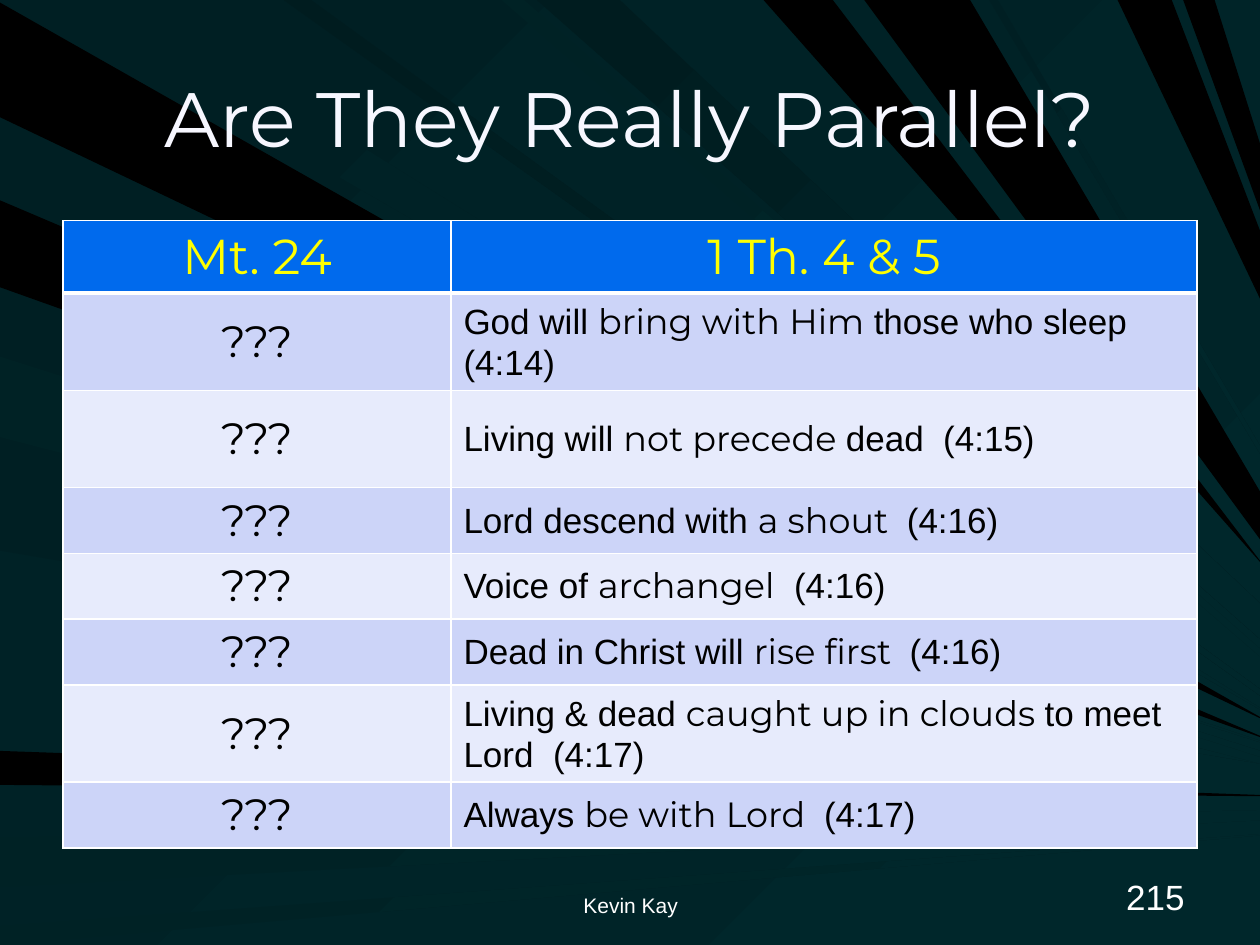
"""Build the 'Are They Really Parallel?' comparison slide over a fan of dark rays."""
from lxml import etree
from pptx import Presentation
from pptx import util as u
from pptx.dml.color import RGBColor
from pptx.enum import text
from pptx.oxml.ns import qn

C = {
    "black": "000000", "white": "FFFFFF", "title": "F7F7FF", "yellow": "FFFF00",
    "header": "006AED", "band1": "CCD4F8", "band2": "E7EBFC",
    "deep": "001C1F", "dark": "001F23", "dim": "002225", "teal": "00272B",
}

RAYS = [
    ("black", "left", 93, 2, 569, 570),
    ("dark", "top", 26, 101, 562, 563),
    ("black", "left", 623, 596, 631, 632),
    ("dim", "left", 704, 665, 643, 651),
    ("dim", "left", 750, 735, 662, 663),
    ("dark", "left", 270, 258, 588, 589),
    ("black", "left", 228, 159, 584, 585),
    ("dim", "top", 398, 416, 515, 521),
    ("deep", "top", 426, 492, 479, 507),
    ("black", "top", 606, 661, 445, 446),
    ("black", "top", 887, 930, 183, 237),
    ("black", "top", 939, 964, 114, 167),
    ("dark", "left", 342, 278, 596, 602),
    ("dark", "left", 437, 374, 605, 606),
    ("deep", "top", 225, 247, 547, 552),
    ("black", "top", 686, 770, 390, 428),
    ("dark", "top", 785, 792, 354, 360),
    ("dim", "left", 347, 283, 601, 606),
]

ROWS = [
    ("God will ", "bring with Him ", "those who sleep  (4:14)"),
    ("Living will ", "not precede ", "dead  (4:15)"),
    ("Lord descend with ", "a shout  ", "(4:16)"),
    ("Voice of ", "archangel", "  (4:16)"),
    ("Dead in Christ will ", "rise first  ", "(4:16)"),
    ("Living & dead ", "caught up in clouds ", "to meet Lord  (4:17)"),
    ("Always ", "be with Lord  ", "(4:17)"),
]
TALL_ROWS = (1, 2, 6)


def paint(fill, start, end):
    """Fill with one colour, or with a diagonal gradient."""
    if start == end:
        fill.solid()
        fill.fore_color.rgb = RGBColor.from_string(C[start])
        return
    fill.gradient()
    fill.gradient_angle = 315
    for stop, name in zip(fill.gradient_stops, (start, end)):
        stop.color.rgb = RGBColor.from_string(C[name])


def write(tf, parts, size, color, align):
    """Write (text, font name) parts as the runs of one paragraph."""
    tf.word_wrap = True
    p = tf.paragraphs[0]
    p.alignment = align
    for words, font in parts:
        r = p.add_run()
        r.text = words
        r.font.name = font
        r.font.size = u.Pt(size)
        r.font.bold = False
        r.font.color.rgb = RGBColor.from_string(C[color])


LEFT, CENTER, RIGHT = text.PP_ALIGN.LEFT, text.PP_ALIGN.CENTER, text.PP_ALIGN.RIGHT

prs = Presentation()
prs.slide_width, prs.slide_height = u.Cm(25.4), u.Cm(19.05)
s = prs.slides.add_slide(prs.slide_layouts[5])
paint(s.background.fill, "dark", "teal")

for color, edge, near_low, near_high, far_high, far_low in RAYS:
    near = [(0, d) if edge == "left" else (d, 0) for d in (near_low, near_high)]
    fb = s.shapes.build_freeform(*near[0], scale=u.Cm(25.4) / 1000)
    fb.add_line_segments([near[1], (1000, far_high), (1000, far_low)], close=True)
    sp = fb.convert_to_shape()
    sp.shadow.inherit = False
    sp.line.fill.background()
    paint(sp.fill, color, "black" if color == "black" else "teal")

title = s.shapes.title
s.shapes._spTree.append(title._element)
title.left, title.top = u.Cm(1.27), u.Cm(0.76)
title.width, title.height = u.Cm(22.86), u.Cm(3.18)
title.text_frame.vertical_anchor = text.MSO_ANCHOR.MIDDLE
write(title.text_frame, [("Are They Really Parallel?", "Montserrat")], 44, "title", CENTER)

heights = [1.45] + [1.96 if i in TALL_ROWS else 1.32 for i in range(1, len(ROWS) + 1)]
frame = s.shapes.add_table(len(heights), 2, u.Cm(1.27), u.Cm(4.45), u.Cm(22.86), u.Cm(sum(heights)))
table = frame.table
table.horz_banding = False
for column, width in zip(table.columns, (7.82, 15.04)):
    column.width = u.Cm(width)

for i, (row, height) in enumerate(zip(table.rows, heights)):
    row.height = u.Cm(height)
    for cell in row.cells:
        cell.vertical_anchor = text.MSO_ANCHOR.MIDDLE
        for side in "LRTB":
            thick = (i, side) in ((0, "B"), (1, "T"))
            ln = etree.SubElement(cell._tc.get_or_add_tcPr(), qn(f"a:ln{side}"), w=str(u.Pt(3 if thick else 1)))
            solid = etree.SubElement(ln, qn("a:solidFill"))
            etree.SubElement(solid, qn("a:srgbClr"), val=C["white"])
        band = "header" if i == 0 else "band1" if i % 2 else "band2"
        paint(cell.fill, band, band)

for j, heading in enumerate(("Mt. 24", "1 Th. 4 & 5")):
    write(table.cell(0, j).text_frame, [(heading, "Montserrat")], 28, "yellow", CENTER)
for i, phrases in enumerate(ROWS, 1):
    write(table.cell(i, 0).text_frame, [("???", "Montserrat")], 25, "black", CENTER)
    parts = zip(phrases, ("Arial", "Montserrat", "Arial"))
    write(table.cell(i, 1).text_frame, parts, 20, "black", LEFT)

for left, width, words, size, align in (
    (8.69, 8.05, "Kevin Kay", 12, CENTER),
    (18.21, 5.92, "215", 20, RIGHT),
):
    sp = s.shapes.add_textbox(u.Cm(left), u.Cm(17.35), u.Cm(width), u.Cm(1.27))
    sp.text_frame.vertical_anchor = text.MSO_ANCHOR.BOTTOM
    write(sp.text_frame, [(words, "Arial")], size, "white", align)

prs.save("out.pptx")
